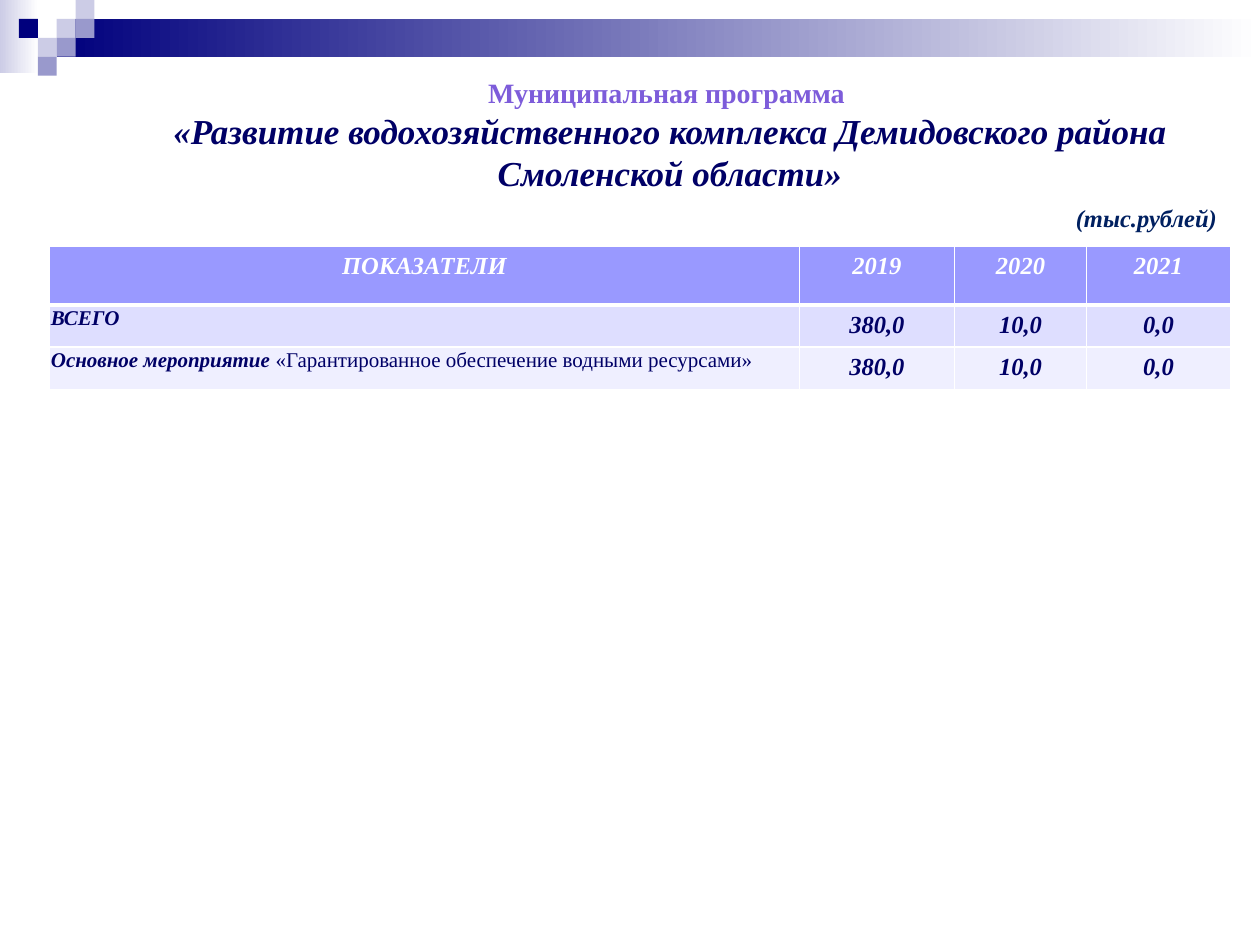
"""Builds the municipal water management programme slide."""
from dataclasses import dataclass

from lxml.etree import SubElement
from pptx import Presentation
from pptx.dml.color import RGBColor
from pptx.enum.shapes import MSO_SHAPE
from pptx.enum.text import MSO_ANCHOR, MSO_AUTO_SIZE, PP_ALIGN
from pptx.oxml.ns import qn
from pptx.util import Pt


@dataclass(frozen=True)
class Theme:
    font: str = "Times New Roman"
    white: str = "FFFFFF"
    navy: str = "00007D"
    pale: str = "CCCCE6"
    mid: str = "9999CC"
    violet: str = "7D5CDA"
    ink: str = "000066"
    unit_ink: str = "002060"
    header_fill: str = "9999FF"
    total_fill: str = "DEDEFF"
    measure_fill: str = "EFEFFF"
    title_size: int = 20
    kicker_size: int = 16
    value_size: int = 14
    label_size: int = 12


THEME = Theme()


def add_run(paragraph, text, *, size, color, bold=True, italic=True, align=None):
    run = paragraph.add_run()
    run.text = text
    run.font.name = THEME.font
    run.font.size = Pt(size)
    run.font.bold = bold
    run.font.italic = italic
    run.font.color.rgb = RGBColor.from_string(color)
    if align is not None:
        paragraph.alignment = align


class SlideBuilder:
    def __init__(self, slide, theme):
        self.slide = slide
        self.theme = theme

    def rectangle(self, left, top, width, height, color, fade_to=None):
        box = self.slide.shapes.add_shape(
            MSO_SHAPE.RECTANGLE, Pt(left), Pt(top), Pt(width), Pt(height))
        box.shadow.inherit = False
        box.line.fill.background()
        if fade_to is None:
            box.fill.solid()
            box.fill.fore_color.rgb = RGBColor.from_string(color)
            return
        box.fill.gradient()
        box.fill.gradient_angle = 0
        for stop, position, shade in zip(box.fill.gradient_stops, (0, 1), (color, fade_to)):
            stop.position = position
            stop.color.rgb = RGBColor.from_string(shade)

    def text_box(self, left, top, width, height, wrap=True):
        frame = self.slide.shapes.add_textbox(
            Pt(left), Pt(top), Pt(width), Pt(height)).text_frame
        frame.word_wrap = wrap
        frame.auto_size = MSO_AUTO_SIZE.SHAPE_TO_FIT_TEXT
        return frame

    def table(self, left, top, widths, heights):
        grid = self.slide.shapes.add_table(
            len(heights), len(widths), Pt(left), Pt(top),
            Pt(sum(widths)), Pt(sum(heights))).table
        for column, width in zip(grid.columns, widths):
            column.width = Pt(width)
        for row, height in zip(grid.rows, heights):
            row.height = Pt(height)
        return grid

    def cell(self, cell, runs, fill, top_line=1, bottom_line=1, label=False):
        borders = {"a:lnL": 1, "a:lnR": 1, "a:lnT": top_line, "a:lnB": bottom_line}
        properties = cell._tc.get_or_add_tcPr()
        for tag, width in borders.items():
            line = SubElement(properties, qn(tag), w=str(Pt(width)))
            paint = SubElement(line, qn("a:solidFill"))
            SubElement(paint, qn("a:srgbClr"), val=self.theme.white)
        cell.fill.solid()
        cell.fill.fore_color.rgb = RGBColor.from_string(fill)
        cell.vertical_anchor = MSO_ANCHOR.TOP
        if label:
            cell.margin_left = cell.margin_right = cell.margin_top = Pt(0.7)
            cell.margin_bottom = Pt(0)
        align = PP_ALIGN.LEFT if label else PP_ALIGN.CENTER
        for text, style in runs:
            add_run(cell.text_frame.paragraphs[0], text, align=align, **style)


def main():
    deck = Presentation()
    deck.slide_width, deck.slide_height = Pt(720), Pt(540)
    builder = SlideBuilder(deck.slides.add_slide(deck.slide_layouts[6]), THEME)

    builder.rectangle(0, 0, 22, 42, THEME.pale, fade_to=THEME.white)
    builder.rectangle(32.4, 10.8, 687.6, 21.6, THEME.navy, fade_to=THEME.white)
    tile = 10.8
    mosaic = [(3, 1, THEME.pale), (4, 0, THEME.pale), (4, 1, THEME.mid),
              (2, 2, THEME.pale), (1, 1, THEME.navy), (3, 2, THEME.mid),
              (2, 3, THEME.mid)]
    for column, row, color in mosaic:
        builder.rectangle(column * tile, row * tile, tile, tile, color)

    heading = builder.text_box(73.6, 39.6, 618.5, 75)
    add_run(heading.paragraphs[0], "Муниципальная программа ", size=THEME.kicker_size,
            color=THEME.violet, italic=False, align=PP_ALIGN.CENTER)
    add_run(heading.add_paragraph(),
            "«Развитие водохозяйственного комплекса Демидовского района Смоленской области»",
            size=THEME.title_size, color=THEME.ink, align=PP_ALIGN.CENTER)

    header = {"size": THEME.value_size, "color": THEME.white}
    value = {"size": THEME.value_size, "color": THEME.ink}
    label = {"size": THEME.label_size, "color": THEME.ink}
    plain = {**label, "bold": False, "italic": False}
    budget = builder.table(28.4, 140.7, (428.4, 88.6, 75.6, 82.1), (33.7, 24, 24))

    for column, text in enumerate(("ПОКАЗАТЕЛИ", "2019", "2020", "2021")):
        builder.cell(budget.cell(0, column), [(text, header)],
                     THEME.header_fill, bottom_line=3)

    amounts = ("380,0", "10,0", "0,0")
    indicators = [
        ([("ВСЕГО", label)], THEME.total_fill, 3),
        ([("Основное мероприятие ", label),
          ("«Гарантированное обеспечение водными ресурсами»", plain)],
         THEME.measure_fill, 1),
    ]
    for row, (name, fill, top_line) in enumerate(indicators, start=1):
        builder.cell(budget.cell(row, 0), name, fill, top_line, label=True)
        for column, amount in enumerate(amounts, start=1):
            builder.cell(budget.cell(row, column), [(amount, value)], fill, top_line)

    unit = builder.text_box(607.7, 112.5, 95.8, 24.5, wrap=False)
    add_run(unit.paragraphs[0], "(тыс.рублей)", size=THEME.value_size, color=THEME.unit_ink)

    deck.save("out.pptx")


if __name__ == "__main__":
    main()
